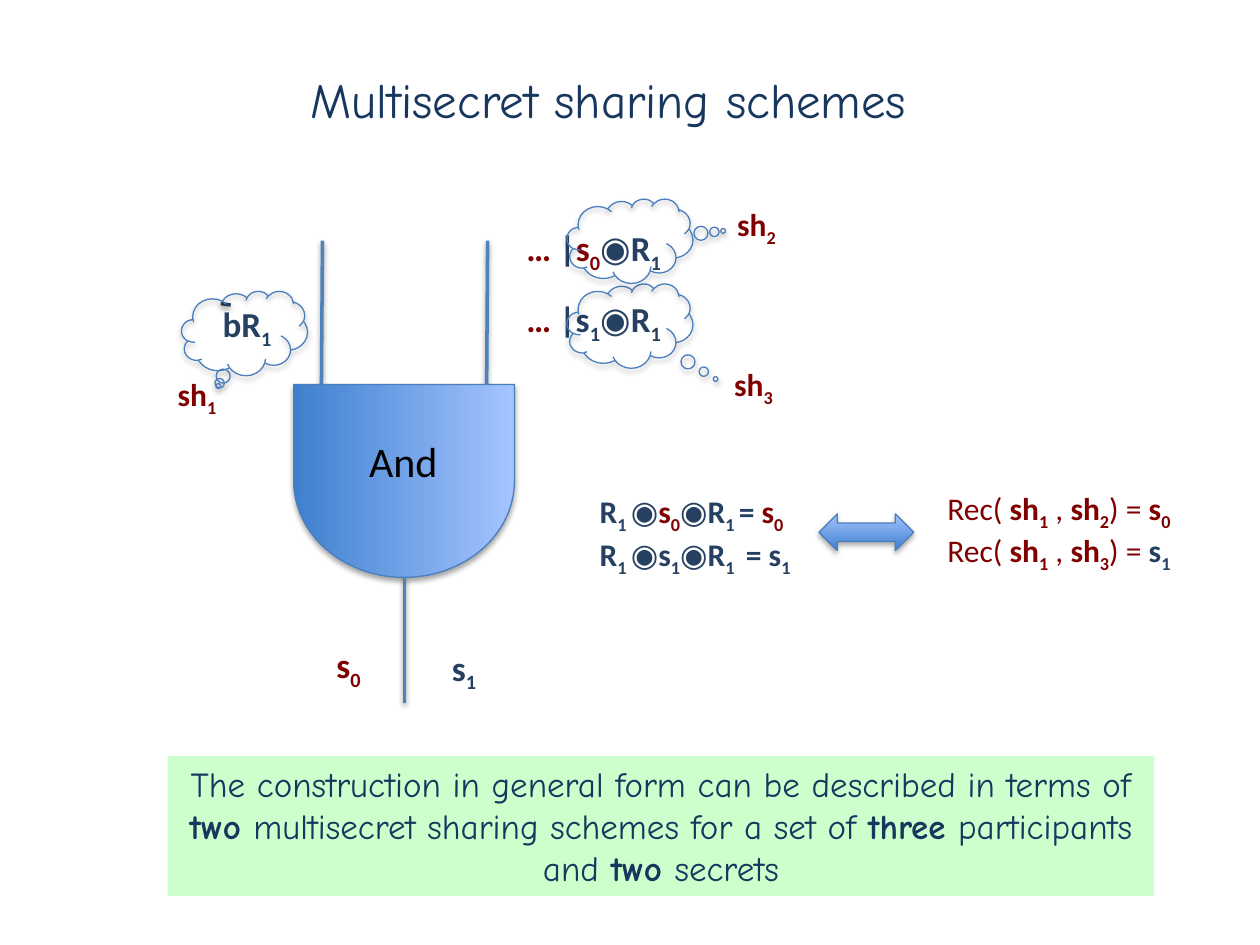
from itertools import groupby

from lxml import etree
from pptx import Presentation
from pptx.dml.color import RGBColor
from pptx.enum import shapes, text
from pptx.oxml import ns
from pptx.util import Cm, Pt

COLORS = {
    "title": "17375E", "navy": "254061", "red": "800000", "black": "000000",
    "wire": "4F81BD", "edge": "4B7EBC", "dark": "3F80CE", "light": "A4C4FF",
    "green": "CCFFCC",
}
SHAPE = shapes.MSO_SHAPE


def rgb(name):
    return RGBColor.from_string(COLORS[name])


class Deck:
    body_font = "Calibri"
    title_font = "Comic Neue"
    symbol_font = "Arial"

    def __init__(self):
        self.prs = Presentation()
        self.prs.slide_width, self.prs.slide_height = Cm(25.4), Cm(19.05)
        self.slide = self.prs.slides.add_slide(self.prs.slide_layouts[6])

    def shadow(self, sp, alpha, distance):
        effects = etree.SubElement(sp._element.spPr, ns.qn("a:effectLst"))
        outer = etree.SubElement(
            effects, ns.qn("a:outerShdw"), blurRad=str(Pt(3.1)),
            dist=str(Pt(distance)), dir="5400000", rotWithShape="0")
        color = etree.SubElement(outer, ns.qn("a:srgbClr"), val=COLORS["black"])
        etree.SubElement(color, ns.qn("a:alpha"), val=str(alpha * 1000))

    def add_run(self, p, content, size, font, color, bold, sub):
        r = p.add_run()
        r.text = content
        r.font.size, r.font.name, r.font.bold = Pt(size), font, bold
        r.font.color.rgb = rgb(color)
        if sub:
            r.font._element.set("baseline", "-25000")

    def fill_text(self, tf, paragraphs, size, font):
        """Odd pieces between underscores are subscripts."""
        for i, parts in enumerate(paragraphs):
            p = tf.paragraphs[0] if i == 0 else tf.add_paragraph()
            for content, color, bold in parts:
                for j, piece in enumerate(content.split("_")):
                    for symbol, chars in groupby(piece, lambda c: c == "◉"):
                        self.add_run(p, "".join(chars), size,
                                     self.symbol_font if symbol else font,
                                     color, bold, j % 2 == 1)

    def label(self, x, y, w, h, *paragraphs, size=20, font=body_font):
        tf = self.slide.shapes.add_textbox(Cm(x), Cm(y), Cm(w), Cm(h)).text_frame
        tf.word_wrap = False
        tf.auto_size = text.MSO_AUTO_SIZE.SHAPE_TO_FIT_TEXT
        self.fill_text(tf, paragraphs, size, font)

    def wire(self, x1, y1, x2, y2, color="wire"):
        line = self.slide.shapes.add_connector(
            shapes.MSO_CONNECTOR.STRAIGHT, Cm(x1), Cm(y1), Cm(x2), Cm(y2))
        line.line.color.rgb, line.line.width = rgb(color), Pt(2)
        self.shadow(line, 38, 1.6)

    def figure(self, kind, x, y, w, h, gradient=False, rotation=0, tail=()):
        sp = self.slide.shapes.add_shape(kind, Cm(x), Cm(y), Cm(w), Cm(h))
        sp.rotation = rotation
        if gradient:
            sp.fill.gradient()
            sp.fill.gradient_angle = 90
            for stop, color in zip(sp.fill.gradient_stops, ("dark", "light")):
                stop.color.rgb = rgb(color)
        else:
            sp.fill.background()
        sp.line.color.rgb, sp.line.width = rgb("edge"), Pt(0.75)
        for i, value in enumerate(tail):
            sp.adjustments[i] = value
        self.shadow(sp, 35, 1.8)

    def banner(self, x, y, w, h, parts):
        sp = self.slide.shapes.add_shape(
            SHAPE.RECTANGLE, Cm(x), Cm(y), Cm(w), Cm(h))
        sp.shadow.inherit = False
        sp.fill.solid()
        sp.fill.fore_color.rgb = rgb("green")
        sp.line.fill.background()
        tf = sp.text_frame
        tf.word_wrap = True
        tf.vertical_anchor = text.MSO_ANCHOR.TOP
        self.fill_text(tf, [parts], 20, self.title_font)
        tf.paragraphs[0].alignment = text.PP_ALIGN.CENTER


def main():
    deck = Deck()
    deck.label(6.02, 1.27, 13.87, 1.45,
               [("Multisecret sharing schemes", "title", False)],
               size=28, font=deck.title_font)

    for x in (9.83, 6.5):
        deck.wire(x, 4.85, x - 0.02, 7.75)
    deck.figure(SHAPE.FLOWCHART_DELAY, 6.2, 7.47, 3.89, 4.45,
                gradient=True, rotation=90)
    deck.label(7.19, 8.66, 1.91, 1.27, [("And", "black", False)], size=24)
    deck.wire(8.15, 11.63, 8.15, 14.17)

    deck.label(4.24, 5.97, 1.55, 1.12, [("bR_1", "navy", True)])
    deck.wire(4.45, 6.12, 4.65, 6.15, "navy")
    deck.label(10.36, 4.45, 3.33, 1.12,
               [("… ", "red", True), ("|", "navy", True),
                ("s_0", "red", True), ("◉R_1", "navy", True)])
    deck.label(10.36, 5.87, 3.33, 1.12,
               [("…", "red", True), (" |s_1_◉R_1", "navy", True)])
    deck.label(6.53, 12.85, 1.04, 1.12, [("s_0", "red", True)])
    deck.label(8.86, 12.9, 1.04, 1.12, [("s_1", "navy", True)])

    deck.label(11.84, 9.8, 4.55, 1.8,
               [("R_1 _◉", "navy", True), ("s_0", "red", True),
                ("◉R_1 _= ", "navy", True), ("s_0", "red", True)],
               [("R_1 _◉s_1_◉R_1 _ = s_1", "navy", True)], size=18)

    for i, (x, y) in enumerate([(3.33, 7.44), (14.61, 4.01), (14.55, 7.24)], 1):
        deck.label(x, y, 1.32, 1.02, [(f"sh_{i}", "red", True)], size=18)

    for y, share, secret, color in ((9.73, 2, 0, "red"), (10.59, 3, 1, "navy")):
        deck.label(18.85, y, 5.13, 1.02,
                   [("Rec( ", "red", False), ("sh_1", "red", True),
                    (" , ", "red", False), (f"sh_{share}", "red", True),
                    (") = ", "red", False), (f"s_{secret}", color, True)],
                   size=18)

    deck.banner(3.38, 15.24, 19.89, 2.82, [
        ("The construction in general form can be described in terms of ",
         "title", False),
        ("two ", "title", True),
        ("multisecret sharing schemes for a set of ", "title", False),
        ("three ", "title", True),
        ("participants and ", "title", False),
        ("two ", "title", True),
        ("secrets", "title", False)])

    deck.figure(SHAPE.LEFT_RIGHT_ARROW, 16.51, 10.36, 1.91, 0.74, gradient=True)
    for x, y, tail in ((3.66, 5.87, ()), (11.43, 5.72, (0.68, 0.63)),
                       (11.43, 4.01, (0.74, -0.12))):
        deck.figure(SHAPE.CLOUD_CALLOUT, x, y, 2.54, 1.7, tail=tail)

    deck.prs.save("out.pptx")


if __name__ == "__main__":
    main()
